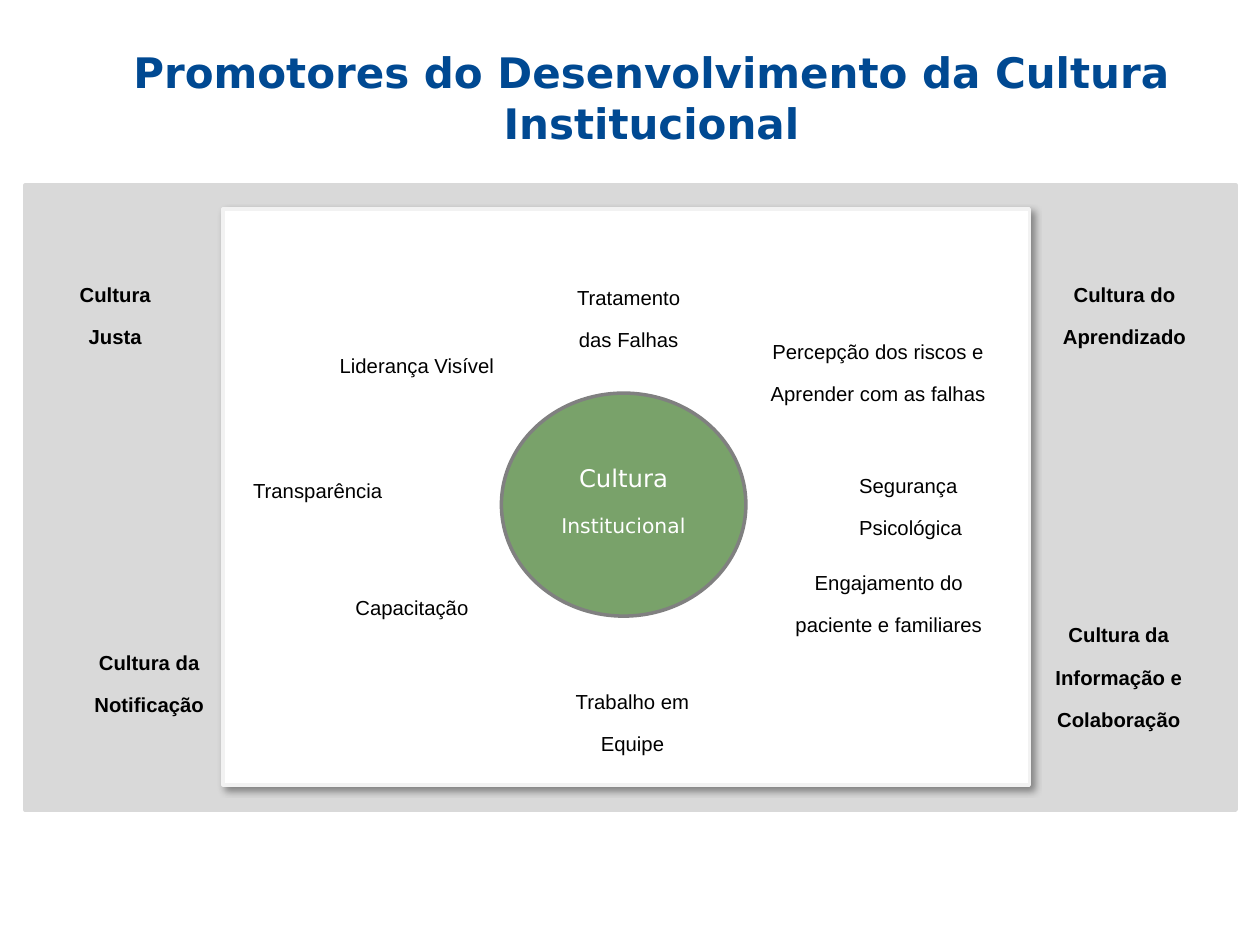
"""Build the slide on the promoters of institutional culture."""
import lxml.etree
import pptx
import pptx.dml.color
import pptx.enum.shapes
import pptx.enum.text
import pptx.oxml
import pptx.util
from pptx.util import Inches

SHAPES = pptx.enum.shapes.MSO_SHAPE
ALIGN = pptx.enum.text.PP_ALIGN
AUTO_SIZE = pptx.enum.text.MSO_AUTO_SIZE
MIDDLE = pptx.enum.text.MSO_ANCHOR.MIDDLE


def color(hex_string):
    return pptx.dml.color.RGBColor.from_string(hex_string)


def style(paragraph, font_name, size, hex_string, bold=False, raised=True):
    paragraph.font.name = font_name
    paragraph.font.size = pptx.util.Pt(size)
    paragraph.font.bold = bold
    paragraph.font.color.rgb = color(hex_string)
    if raised:
        for run in paragraph.runs:
            run._r.get_or_add_rPr().set("baseline", "30000")


presentation = pptx.Presentation()
presentation.slide_width, presentation.slide_height = Inches(10), Inches(7.5)
slide = presentation.slides.add_slide(presentation.slide_layouts[5])

title = slide.shapes.title
title.left, title.top = Inches(0.92), Inches(0.52)
title.width, title.height = Inches(8.5), Inches(0.5)
title.text_frame.text = "Promotores do Desenvolvimento da Cultura Institucional"
title.text_frame.auto_size = AUTO_SIZE.NONE
title.text_frame.vertical_anchor = MIDDLE
title.text_frame.paragraphs[0].alignment = ALIGN.CENTER
style(title.text_frame.paragraphs[0], "DejaVu Sans", 24, "004992", bold=True, raised=False)

areas = []
for preset, left, top, width, height, fill, outline in [
    (SHAPES.RECTANGLE, 0.2, 1.47, 9.61, 4.96, "D9D9D9", "D9D9D9"),
    (SHAPES.RECTANGLE, 1.77, 1.66, 6.4, 4.57, "FFFFFF", "F2F2F2"),
    (SHAPES.OVAL, 3.98, 3.12, 1.94, 1.77, "79A26A", "808080"),
]:
    area = slide.shapes.add_shape(preset, Inches(left), Inches(top), Inches(width), Inches(height))
    area.shadow.inherit = False
    area.fill.solid()
    area.fill.fore_color.rgb = color(fill)
    area.line.color.rgb = color(outline)
    area.line.width = pptx.util.Pt(2)
    areas.append(area)
frame, panel, core = areas

effects = panel._element.spPr.find(pptx.oxml.ns.qn("a:effectLst"))
shadow = lxml.etree.SubElement(
    effects, pptx.oxml.ns.qn("a:outerShdw"),
    blurRad=str(pptx.util.Pt(4)), dist=str(pptx.util.Pt(3)), dir="2700000", algn="tl", rotWithShape="0")
shadow_color = lxml.etree.SubElement(shadow, pptx.oxml.ns.qn("a:srgbClr"), val="000000")
lxml.etree.SubElement(shadow_color, pptx.oxml.ns.qn("a:alpha"), val="40000")

core.text_frame.word_wrap = True
core.text_frame.vertical_anchor = MIDDLE
core_text = core.text_frame.paragraphs[0]
core_text.alignment = ALIGN.CENTER
for word, size in [("Cultura", 24), (" Institucional", 20)]:
    run = core_text.add_run()
    run.text = word
    run.font.size = pptx.util.Pt(size)
style(core_text, "DejaVu Sans", 20, "FFFFFF")

cultures = [
    ("Cultura do Aprendizado", 8.2, 2.16, 1.45, 0.55),
    ("Cultura Justa", 0.35, 2.16, 1.13, 0.55),
    ("Cultura da Notificação", 0.47, 5.08, 1.43, 0.55),
    ("Cultura da Informação e Colaboração", 8.11, 4.86, 1.54, 0.77),
]
promoters = [
    ("Tratamento\ndas Falhas", 4.24, 2.18, 1.5, 0.55),
    ("Liderança Visível", 2.56, 2.72, 1.5, 0.55),
    ("Transparência", 1.91, 3.71, 1.68, 0.32),
    ("Capacitação", 2.36, 4.64, 1.82, 0.33),
    ("Trabalho em Equipe", 4.33, 5.39, 1.38, 0.55),
    ("Segurança Psicológica", 6.72, 3.67, 1.52, 0.55),
    ("Engajamento do paciente e familiares", 6.07, 4.44, 1.97, 0.55),
    ("Percepção dos riscos e Aprender com as falhas", 5.89, 2.61, 2.16, 0.55),
]
left_aligned = {"Transparência", "Segurança Psicológica"}
for labels, bold in [(cultures, True), (promoters, False)]:
    for wording, left, top, width, height in labels:
        label = slide.shapes.add_textbox(Inches(left), Inches(top), Inches(width), Inches(height))
        label.text_frame.word_wrap = True
        label.text_frame.auto_size = AUTO_SIZE.SHAPE_TO_FIT_TEXT
        label.text_frame.text = wording
        for paragraph in label.text_frame.paragraphs:
            paragraph.alignment = ALIGN.LEFT if wording in left_aligned else ALIGN.CENTER
            style(paragraph, "Arial", 20, "000000", bold)

presentation.save("out.pptx")
